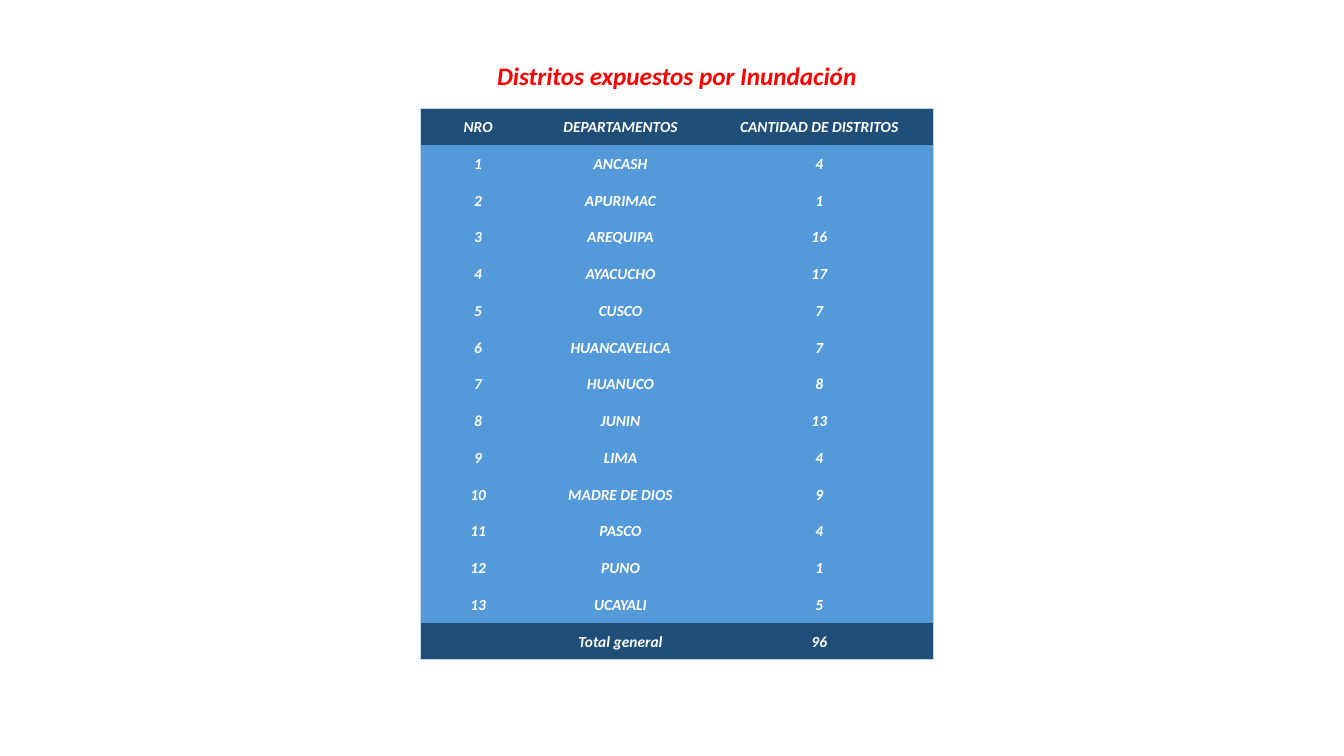
"""Slide with a table of the districts exposed to flooding, by department."""
from lxml import etree
from pptx import Presentation
from pptx.dml.color import RGBColor
from pptx.enum import text
from pptx.oxml import ns
from pptx.util import Pt

RED = RGBColor(0xFF, 0x00, 0x00)
WHITE = RGBColor(0xFF, 0xFF, 0xFF)
NAVY = RGBColor(0x1F, 0x4E, 0x79)
BLUE = RGBColor(0x54, 0x99, 0xDA)
PALE_BLUE = RGBColor(0xC4, 0xD5, 0xEB)

departments = [
    ("ANCASH", 4), ("APURIMAC", 1), ("AREQUIPA", 16), ("AYACUCHO", 17),
    ("CUSCO", 7), ("HUANCAVELICA", 7), ("HUANUCO", 8), ("JUNIN", 13),
    ("LIMA", 4), ("MADRE DE DIOS", 9), ("PASCO", 4), ("PUNO", 1), ("UCAYALI", 5),
]
rows = [("NRO", "DEPARTAMENTOS", "CANTIDAD DE DISTRITOS")]
rows += [(number, name, count) for number, (name, count) in enumerate(departments, 1)]
rows.append(("", "Total general", sum(count for _, count in departments)))
column_widths = [82, 121.5, 162.5]
row_height = 26.25
last_row, last_column = len(rows) - 1, len(column_widths) - 1


def add_run(paragraph, wording, size, color):
    paragraph.alignment = text.PP_ALIGN.CENTER
    run = paragraph.add_run()
    run.text = str(wording)
    run.font.name = "Calibri"
    run.font.size = Pt(size)
    run.font.bold = run.font.italic = True
    run.font.color.rgb = color


def add_border(cell, side, visible):
    line = etree.SubElement(cell._tc.get_or_add_tcPr(), ns.qn(f"a:ln{side}"))
    if visible:
        line.set("w", str(Pt(0.5)))
        fill = etree.SubElement(line, ns.qn("a:solidFill"))
        etree.SubElement(fill, ns.qn("a:srgbClr"), val=str(PALE_BLUE))
    else:
        etree.SubElement(line, ns.qn("a:noFill"))


presentation = Presentation()
presentation.slide_width = Pt(960)
presentation.slide_height = Pt(540)
slide = presentation.slides.add_slide(presentation.slide_layouts[6])

heading = slide.shapes.add_textbox(Pt(346.3), Pt(39.6), Pt(274.3), Pt(29)).text_frame
heading.word_wrap = False
heading.auto_size = text.MSO_AUTO_SIZE.SHAPE_TO_FIT_TEXT
add_run(heading.paragraphs[0], "Distritos expuestos por Inundación", 18, RED)

districts = slide.shapes.add_table(
    len(rows), len(column_widths), Pt(300.5), Pt(77.5),
    Pt(sum(column_widths)), Pt(row_height * len(rows))).table
districts.first_row = districts.horz_banding = False
for column, width in zip(districts.columns, column_widths):
    column.width = Pt(width)

for r, values in enumerate(rows):
    districts.rows[r].height = Pt(row_height)
    for c, value in enumerate(values):
        cell = districts.cell(r, c)
        cell.vertical_anchor = text.MSO_ANCHOR.MIDDLE
        cell.margin_left = cell.margin_right = cell.margin_top = Pt(0.7)
        cell.margin_bottom = Pt(0)
        outer_sides = {"L": c == 0, "R": c == last_column, "T": r == 0, "B": r == last_row}
        for side, visible in outer_sides.items():
            add_border(cell, side, visible)
        cell.fill.solid()
        cell.fill.fore_color.rgb = NAVY if r in (0, last_row) else BLUE
        if value != "":
            add_run(cell.text_frame.paragraphs[0], value, 11, WHITE)

presentation.save("out.pptx")
